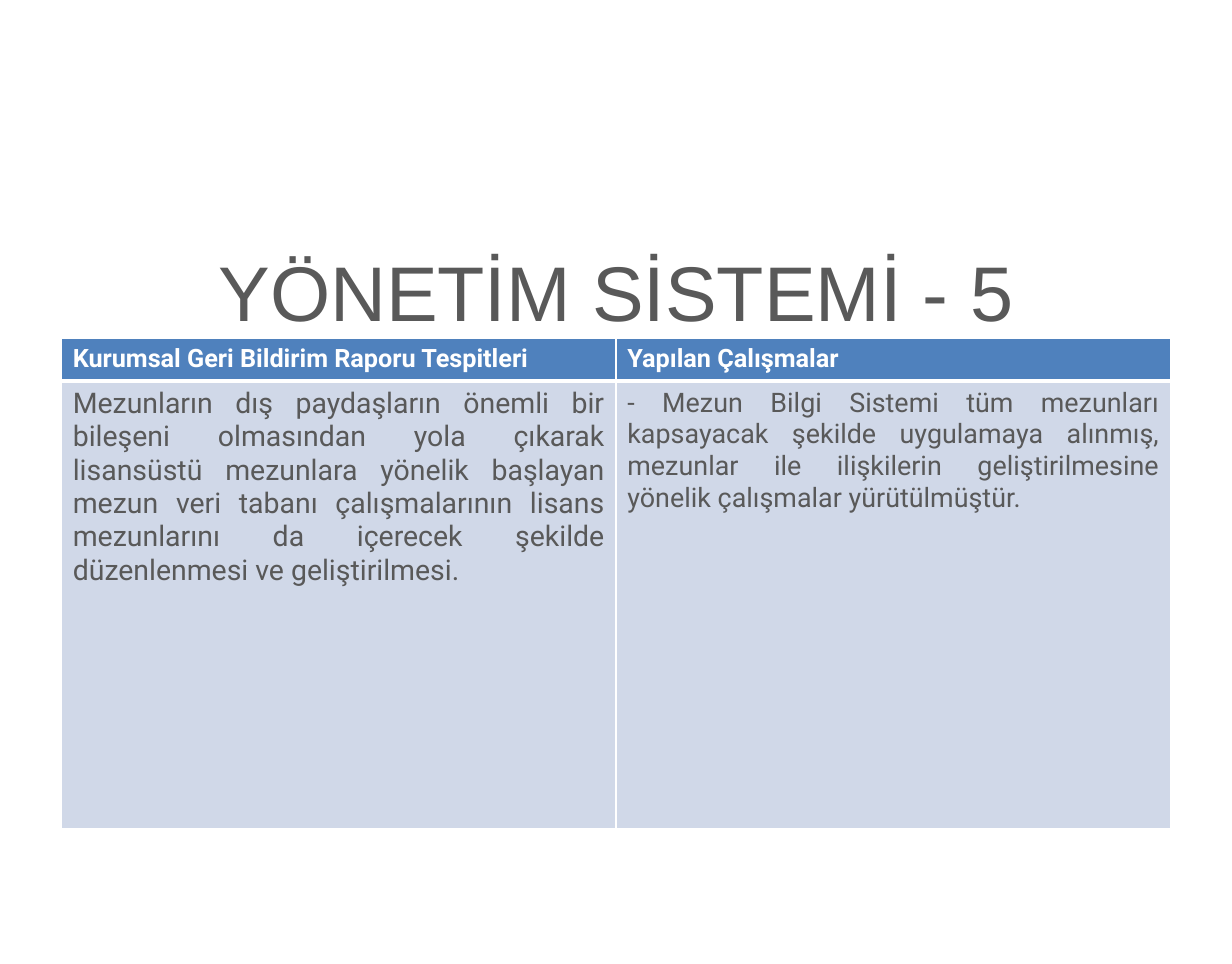
from lxml import etree
from pptx import Presentation
from pptx import util as u
from pptx.dml.color import RGBColor
from pptx.enum import text
from pptx.oxml import ns

PX = 9144
COLORS = {"ink": "595959", "white": "FFFFFF", "header": "4F81BD", "body": "D0D8E8"}
ALIGN = text.PP_ALIGN


class Deck:
    def __init__(self, width, height):
        self.prs = Presentation()
        self.prs.slide_width, self.prs.slide_height = u.Emu(width * PX), u.Emu(height * PX)
        self.s = self.prs.slides.add_slide(self.prs.slide_layouts[6])

    def add_text(self, tf, words, size, font, color, align, bold=False):
        tf.word_wrap = True
        p = tf.paragraphs[0]
        p.alignment = align
        r = p.add_run()
        r.text = words
        r.font.size, r.font.name, r.font.bold = u.Pt(size), font, bold
        r.font.color.rgb = RGBColor.from_string(COLORS[color])

    def title(self, box, words, size, inset):
        sp = self.s.shapes.add_textbox(*[u.Emu(v * PX) for v in box])
        tf = sp.text_frame
        tf.vertical_anchor = text.MSO_ANCHOR.TOP
        tf.margin_top = u.Emu(inset * PX)
        self.add_text(tf, words, size, "Arial", "ink", ALIGN.CENTER)

    def border(self, cell, **widths):
        tc_pr = cell._tc.get_or_add_tcPr()
        for side, width in widths.items():
            ln = etree.SubElement(tc_pr, ns.qn(f"a:ln{side}"), w=str(u.Pt(width)))
            fill = etree.SubElement(ln, ns.qn("a:solidFill"))
            etree.SubElement(fill, ns.qn("a:srgbClr"), val=COLORS["white"])

    def table(self, box, heights, rows):
        frame = self.s.shapes.add_table(
            len(rows), len(rows[0]), *[u.Emu(v * PX) for v in box])
        tbl = frame.table
        for i, (height, row) in enumerate(zip(heights, rows)):
            tbl.rows[i].height = u.Emu(height * PX)
            head = i == 0
            for j, (words, size) in enumerate(row):
                cell = tbl.cell(i, j)
                self.border(cell, L=1, R=1, T=1 if head else 3, B=3 if head else 1)
                cell.fill.solid()
                cell.fill.fore_color.rgb = RGBColor.from_string(
                    COLORS["header" if head else "body"])
                self.add_text(cell.text_frame, words, size, "Roboto",
                              "white" if head else "ink",
                              ALIGN.LEFT if head else ALIGN.JUSTIFY, head)


def main():
    deck = Deck(1083, 847)
    deck.title((54, 203, 975, 141), "YÖNETİM SİSTEMİ - 5", 49, 11)
    deck.table((54, 297, 975, 431), (38, 393), [
        [("Kurumsal Geri Bildirim Raporu Tespitleri", 16),
         ("Yapılan Çalışmalar", 16)],
        [("Mezunların dış paydaşların önemli bir bileşeni olmasından yola çıkarak "
          "lisansüstü mezunlara yönelik başlayan mezun veri tabanı çalışmalarının "
          "lisans mezunlarını da içerecek şekilde düzenlenmesi ve geliştirilmesi.", 18),
         ("- Mezun Bilgi Sistemi tüm mezunları kapsayacak şekilde uygulamaya alınmış, "
          "mezunlar ile ilişkilerin geliştirilmesine yönelik çalışmalar "
          "yürütülmüştür.", 17)],
    ])
    deck.prs.save("out.pptx")


if __name__ == "__main__":
    main()
